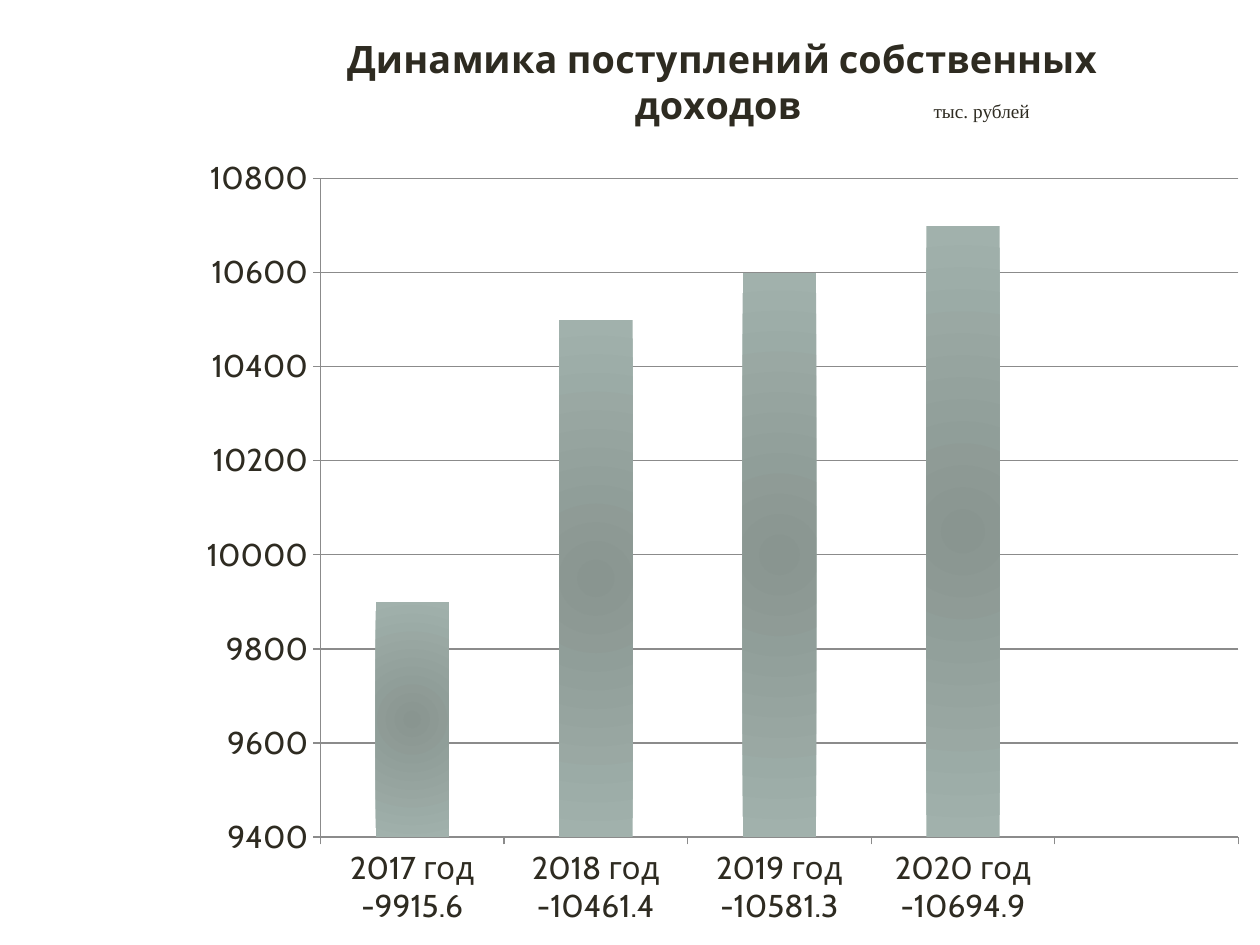
from lxml import etree
from pptx import Presentation
from pptx.chart.data import CategoryChartData
from pptx.dml.color import RGBColor
from pptx.enum.chart import XL_CHART_TYPE as ChartType, XL_TICK_MARK as Tick
from pptx.enum.text import MSO_AUTO_SIZE as AutoSize
from pptx.oxml.ns import qn
from pptx.util import Cm, Pt

INK = RGBColor(0x2E, 0x2B, 0x21)
GREY = RGBColor(0x8B, 0x8B, 0x8B)
BAR_CENTRE = RGBColor(0x89, 0x95, 0x90)
BAR_EDGE = RGBColor(0xA1, 0xB1, 0xAC)

TITLE = "Динамика поступлений собственных доходов "
CATEGORIES = ["2017 год -9915.6", "2018 год -10461.4", "2019 год -10581.3",
              "2020 год -10694.9", ""]
INCOME = [9900, 10500, 10600, 10700, None]


def set_radial_fill(fill):
    fill.gradient()
    for stop, color in zip(fill.gradient_stops, (BAR_CENTRE, BAR_EDGE)):
        stop.color.rgb = color
    grad = fill._fill._gradFill
    grad.remove(grad.find(qn("a:lin")))
    radial = etree.SubElement(grad, qn("a:path"), path="circle")
    etree.SubElement(radial, qn("a:fillToRect"), l="50000", t="50000", r="50000", b="50000")


def set_plot_box(chart, **box):
    area = chart._chartSpace.chart.plotArea
    for old in area.findall(qn("c:layout")):
        area.remove(old)
    layout = etree.Element(qn("c:layout"))
    manual = etree.SubElement(layout, qn("c:manualLayout"))
    settings = {"layoutTarget": "inner", "xMode": "edge", "yMode": "edge", **box}
    for name, value in settings.items():
        etree.SubElement(manual, qn(f"c:{name}"), val=str(value))
    area.insert(0, layout)


def style_axes(chart):
    values = chart.value_axis
    values.minimum_scale, values.maximum_scale = 9400, 10800
    values.major_unit = 200
    values.has_major_gridlines = True
    values.major_gridlines.format.line.color.rgb = GREY
    for axis in (chart.category_axis, values):
        axis.major_tick_mark = Tick.OUTSIDE
        axis.minor_tick_mark = Tick.NONE
        axis.format.line.color.rgb = GREY
        axis.tick_labels.font.size = Pt(18)


def add_income_chart(slide, left, top, width, height):
    data = CategoryChartData(number_format="General")
    data.categories = CATEGORIES
    data.add_series(TITLE, INCOME)
    chart = slide.shapes.add_chart(
        ChartType.COLUMN_STACKED, left, top, width, height, data).chart
    chart.has_legend = False
    chart.font.name, chart.font.size = "Cabin", Pt(18)
    chart.font.color.rgb = INK

    chart.has_title = True
    r = chart.chart_title.text_frame.paragraphs[0].add_run()
    r.text = TITLE
    r.font.name, r.font.size, r.font.bold = "Cabin", Pt(21.6), True
    r.font.color.rgb = INK
    chart.chart_title.include_in_layout = False

    plot = chart.plots[0]
    plot.gap_width, plot.overlap = 150, 100
    plot.vary_by_categories = False
    set_radial_fill(plot.series[0].format.fill)
    style_axes(chart)
    set_plot_box(chart, x=0.126, y=0.189, w=0.854, h=0.697)


def add_unit_note(slide, left, top, width, height):
    tf = slide.shapes.add_textbox(left, top, width, height).text_frame
    tf.word_wrap = False
    tf.auto_size = AutoSize.SHAPE_TO_FIT_TEXT
    r = tf.paragraphs[0].add_run()
    r.text = "тыс. рублей"
    r.font.name, r.font.size = "Times New Roman", Pt(11)
    r.font.color.rgb = INK


def main():
    prs = Presentation()
    prs.slide_width, prs.slide_height = Cm(25.4), Cm(19.05)
    s = prs.slides.add_slide(prs.slide_layouts[6])
    add_income_chart(s, Cm(3.73), Cm(0), Cm(21.67), Cm(19.05))
    add_unit_note(s, Cm(18.57), Cm(1.88), Cm(2.49), Cm(0.74))
    prs.save("out.pptx")


if __name__ == "__main__":
    main()
